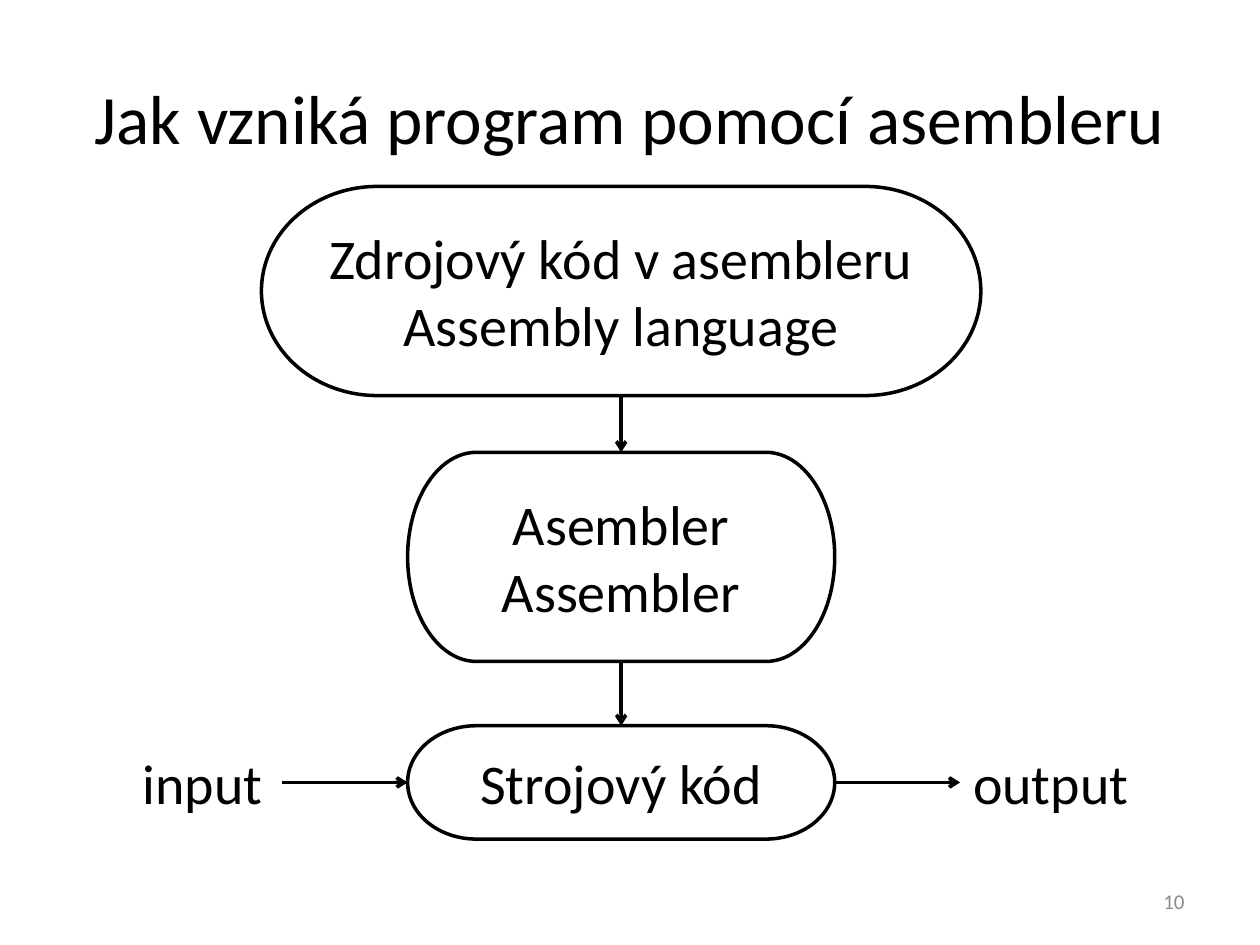
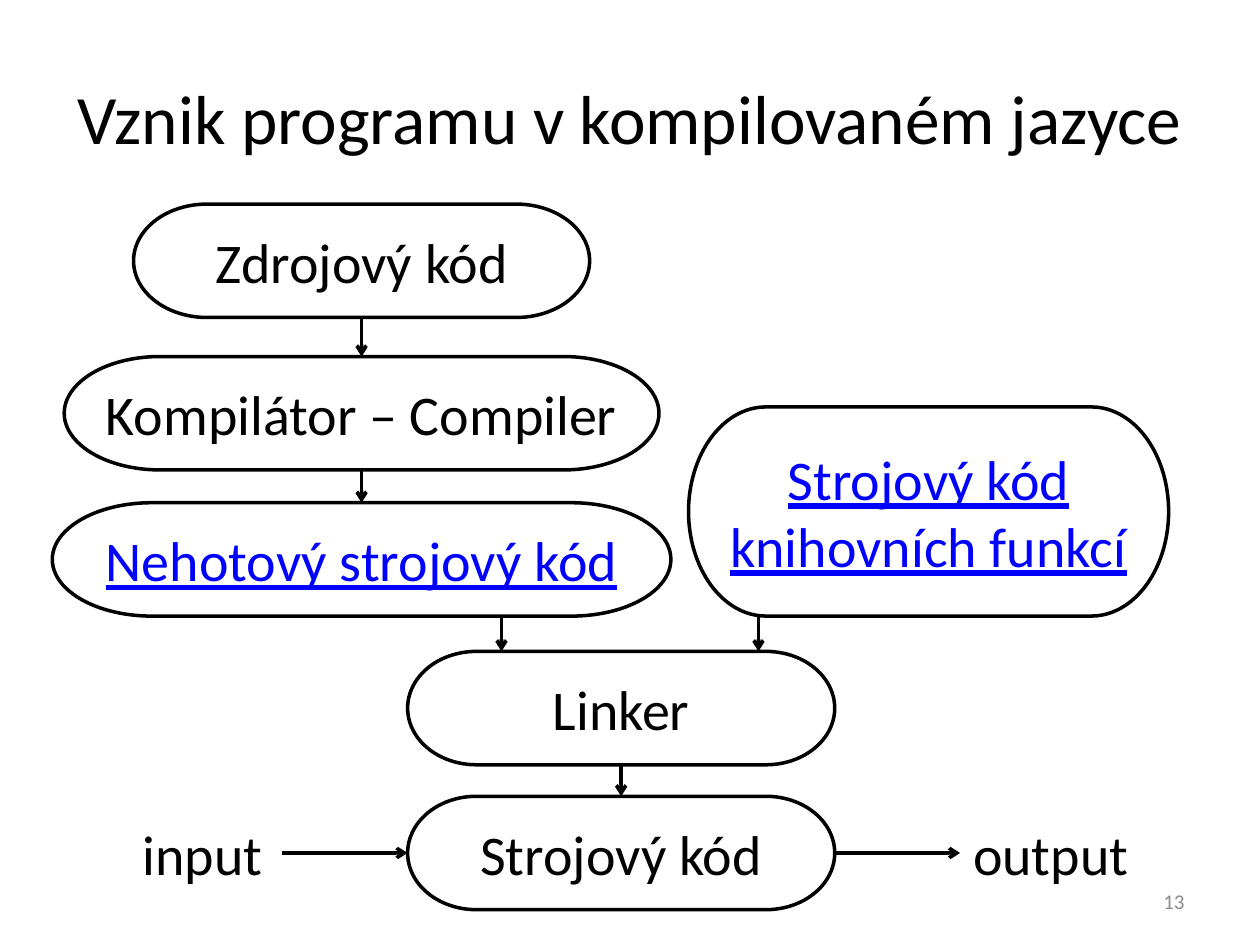
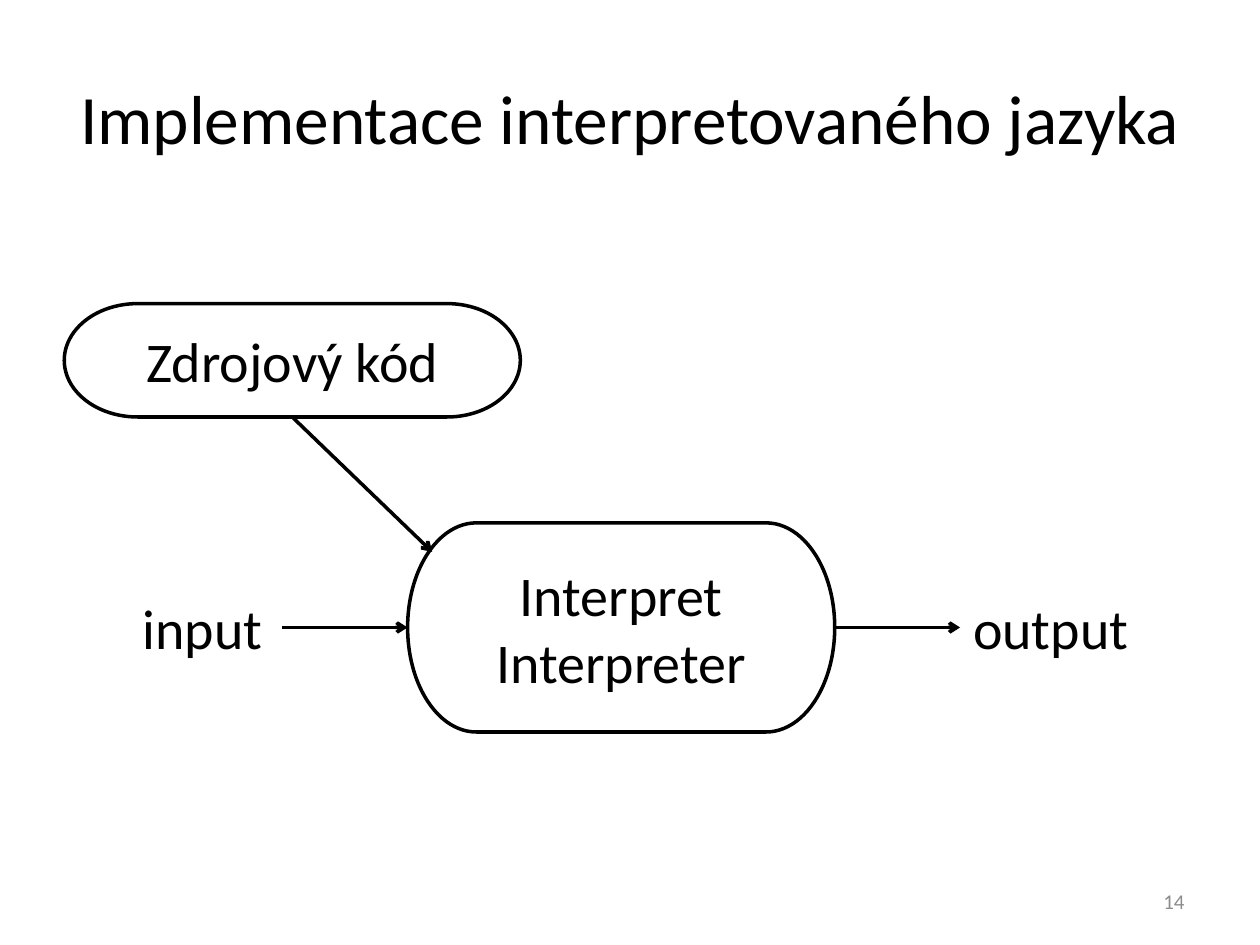
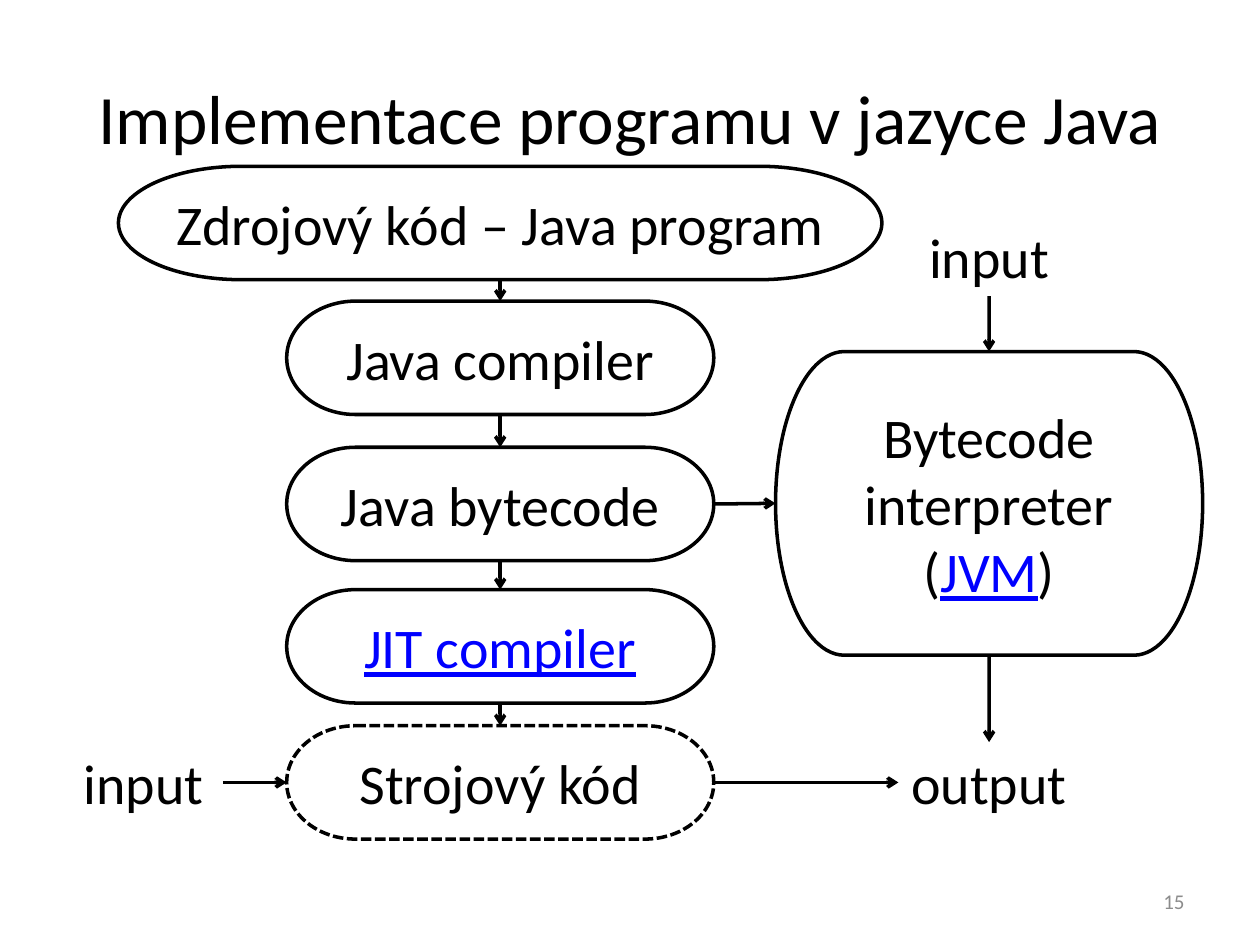
from typing import NamedTuple

from lxml.etree import SubElement
from pptx import Presentation
from pptx.dml.color import RGBColor
from pptx.enum.dml import MSO_LINE
from pptx.enum.shapes import MSO_CONNECTOR, MSO_SHAPE
from pptx.enum.text import MSO_ANCHOR as Anchor, MSO_AUTO_SIZE as AutoSize, PP_ALIGN as Align
from pptx.oxml.ns import qn
from pptx.util import Inches, Pt

FONT = "Calibri"
INK, LINK, MUTED = "000000", "0000FF", "8C8C8C"
TITLE_SIZE, BODY_SIZE, NUMBER_SIZE = 39.6, 32, 12
LINE_WIDTH = 2
TOP, LEFT, BOTTOM, RIGHT = range(4)
TITLE_BOX = (0.5, 0.3, 9, 1.25)
NUMBER_BOX = (7.17, 6.95, 2.33, 0.4)
NODE_HEIGHTS = {1: 0.9, 2: 1.66, 3: 2.41}
NODE_WIDTH = 3.39
LABEL_HEIGHT = 0.64
INPUT_WIDTH, OUTPUT_WIDTH = 1.26, 1.44
MIDDLE = 4.93


class Words(NamedTuple):
    text: str
    linked: bool = False


class Step(NamedTuple):
    top: float
    paragraphs: list
    width: float = NODE_WIDTH
    lines: int = 1
    dashed: bool = False


def color(hex_code):
    return RGBColor.from_string(hex_code)


def inches(values):
    return [Inches(value) for value in values]


def write(frame, paragraphs, size, ink=INK, align=Align.CENTER):
    frame.vertical_anchor = Anchor.MIDDLE
    for index, pieces in enumerate(paragraphs):
        paragraph = frame.add_paragraph() if index else frame.paragraphs[0]
        paragraph.alignment = align
        for words in pieces:
            run = paragraph.add_run()
            run.text = words.text
            run.font.name = FONT
            run.font.size = Pt(size)
            run.font.color.rgb = color(LINK if words.linked else ink)
            if words.linked:
                run.font.underline = True


def plain(*texts):
    return [[Words(text)] for text in texts]


def linked(text):
    return [[Words(text, True)]]


def titled_slide(deck, title, number):
    slide = deck.slides.add_slide(deck.slide_layouts[5])
    heading = slide.shapes.title
    heading.left, heading.top, heading.width, heading.height = inches(TITLE_BOX)
    heading.text_frame.auto_size = AutoSize.NONE
    write(heading.text_frame, plain(title), TITLE_SIZE)
    page = slide.shapes.add_textbox(*inches(NUMBER_BOX)).text_frame
    page.word_wrap = True
    write(page, plain(number), NUMBER_SIZE, MUTED, Align.RIGHT)
    return slide


def block(slide, preset, box, paragraphs, wrap):
    shape = slide.shapes.add_shape(preset, *inches(box))
    shape.shadow.inherit = False
    shape.fill.background()
    shape.text_frame.word_wrap = wrap
    shape.text_frame.auto_size = AutoSize.SHAPE_TO_FIT_TEXT
    write(shape.text_frame, paragraphs, BODY_SIZE)
    return shape


def node(slide, center, step):
    box = (center - step.width / 2, step.top, step.width, NODE_HEIGHTS[step.lines])
    shape = block(slide, MSO_SHAPE.FLOWCHART_TERMINATOR, box, step.paragraphs, True)
    shape.line.color.rgb = color(INK)
    shape.line.width = Pt(LINE_WIDTH)
    if step.dashed:
        shape.line.dash_style = MSO_LINE.SQUARE_DOT
    return shape


def label(slide, text, left, top, width):
    box = (left, top, width, LABEL_HEIGHT)
    shape = block(slide, MSO_SHAPE.FLOWCHART_PROCESS, box, plain(text), False)
    shape.line.fill.background()
    return shape


def arrow(slide, start, end):
    connector = slide.shapes.add_connector(MSO_CONNECTOR.STRAIGHT, *inches(start + end))
    connector.line.color.rgb = color(INK)
    connector.line.width = Pt(LINE_WIDTH)
    SubElement(connector.line._get_or_add_ln(), qn("a:tailEnd"), type="arrow")
    SubElement(connector._element.spPr, qn("a:effectLst"))
    return connector


def join(slide, source, source_side, target, target_side):
    connector = arrow(slide, (0, 0), (0, 0))
    connector.begin_connect(source, source_side)
    connector.end_connect(target, target_side)


def column(slide, center, steps):
    nodes = [node(slide, center, step) for step in steps]
    for upper, lower in zip(nodes, nodes[1:]):
        join(slide, upper, BOTTOM, lower, TOP)
    return nodes


def input_output(slide, core, input_left=0.98, output_left=7.62):
    top = (core.top + core.height / 2) / Inches(1) - LABEL_HEIGHT / 2
    source = label(slide, "input", input_left, top, INPUT_WIDTH)
    result = label(slide, "output", output_left, top, OUTPUT_WIDTH)
    join(slide, source, RIGHT, core, LEFT)
    join(slide, core, RIGHT, result, LEFT)
    return result


def assembler_slide(deck):
    slide = titled_slide(deck, "Jak vzniká program pomocí asembleru", "10")
    *_, machine_code = column(slide, MIDDLE, [
        Step(1.48, plain("Zdrojový kód v asembleru", "Assembly language"), 5.71, 2),
        Step(3.59, plain("Asembler", "Assembler"), lines=2),
        Step(5.76, plain("Strojový kód")),
    ])
    input_output(slide, machine_code)


def compiled_slide(deck):
    slide = titled_slide(deck, "Vznik programu v kompilovaném jazyce", "13")
    column(slide, 2.87, [
        Step(1.62, plain("Zdrojový kód"), 3.62),
        Step(2.83, plain("Kompilátor – Compiler"), 4.72),
        Step(3.99, linked("Nehotový strojový kód"), 4.91),
    ])
    node(slide, 7.37, Step(3.23, linked("Strojový kód knihovních funkcí"), 3.81, 2))
    _, machine_code = column(slide, MIDDLE, [
        Step(5.17, plain("Linker")),
        Step(6.32, plain("Strojový kód")),
    ])
    for x in (3.98, 6.02):
        arrow(slide, (x, 4.89), (x, 5.17))
    input_output(slide, machine_code)


def interpreted_slide(deck):
    slide = titled_slide(deck, "Implementace interpretovaného jazyka", "14")
    interpreter = node(slide, MIDDLE, Step(4.15, plain("Interpret", "Interpreter"), lines=2))
    input_output(slide, interpreter)
    source_code = node(slide, 2.32, Step(2.41, plain("Zdrojový kód"), 3.62))
    arrow(slide, (2.32, 3.31), (3.43, 4.38)).begin_connect(source_code, BOTTOM)


def java_slide(deck):
    slide = titled_slide(deck, "Implementace programu v jazyce Java", "15")
    _, _, bytecode, _, machine_code = column(slide, 3.97, [
        Step(1.32, plain("Zdrojový kód – Java program"), 6.06),
        Step(2.39, plain("Java compiler")),
        Step(3.55, plain("Java bytecode")),
        Step(4.68, linked("JIT compiler")),
        Step(5.76, plain("Strojový kód"), dashed=True),
    ])
    result = input_output(slide, machine_code, 0.51, 7.13)
    jvm_line = [Words("("), Words("JVM", True), Words(")")]
    interpreter = node(slide, 7.85, Step(2.79, plain("Bytecode interpreter") + [jvm_line], lines=3))
    source = label(slide, "input", 7.22, 1.71, INPUT_WIDTH)
    join(slide, bytecode, RIGHT, interpreter, LEFT)
    join(slide, source, BOTTOM, interpreter, TOP)
    join(slide, interpreter, BOTTOM, result, TOP)


def main():
    deck = Presentation()
    deck.slide_width, deck.slide_height = Inches(10), Inches(7.5)
    for build in (assembler_slide, compiled_slide, interpreted_slide, java_slide):
        build(deck)
    deck.save("out.pptx")


if __name__ == "__main__":
    main()
